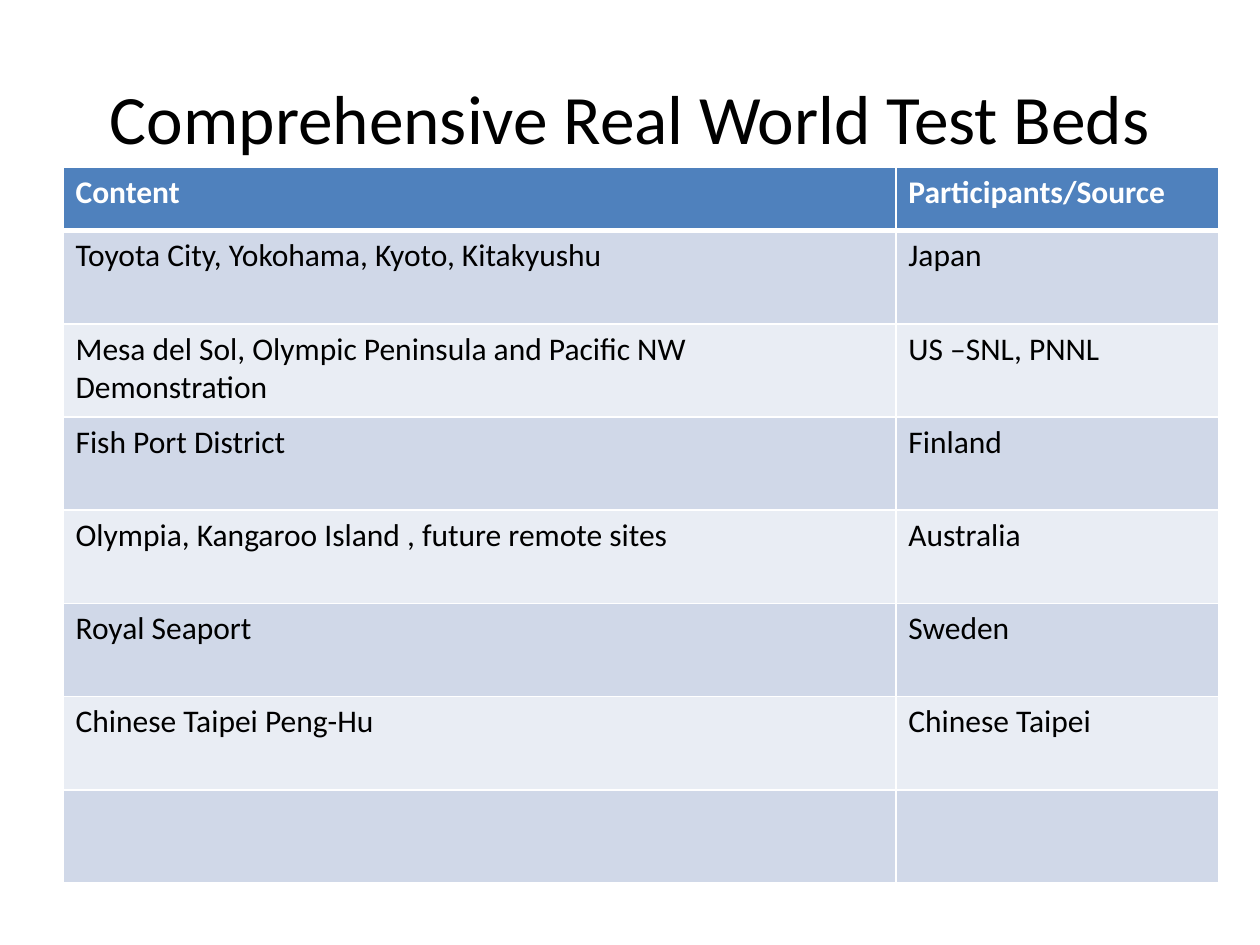
from pptx import Presentation
from pptx.dml.color import RGBColor
from pptx.enum.text import MSO_ANCHOR, PP_ALIGN
from pptx.oxml.ns import qn
from pptx.util import Inches, Pt
from lxml.etree import SubElement

FONT = "Calibri"
BLACK = RGBColor(0x00, 0x00, 0x00)
WHITE = RGBColor(0xFF, 0xFF, 0xFF)
HEADER_BLUE = RGBColor(0x4F, 0x81, 0xBD)
BANDS = (RGBColor(0xE9, 0xED, 0xF4), RGBColor(0xD0, 0xD8, 0xE8))

COL_WIDTHS = (6.61, 2.56)
HEADER_HEIGHT, ROW_HEIGHT = 0.5, 0.74
TEST_BEDS = [
    ("Content", "Participants/Source"),
    ("Toyota City, Yokohama, Kyoto, Kitakyushu", "Japan"),
    ("Mesa del Sol, Olympic Peninsula and Pacific NW Demonstration",
     "US –SNL, PNNL"),
    ("Fish Port District", "Finland"),
    ("Olympia, Kangaroo Island , future remote sites", "Australia"),
    ("Royal Seaport", "Sweden"),
    ("Chinese Taipei Peng-Hu", "Chinese Taipei"),
    ("", ""),
]


def set_font(p, size, color, bold=False):
    p.font.name = FONT
    p.font.size = Pt(size)
    p.font.bold = bold
    p.font.color.rgb = color


def add_title(s, text):
    tf = s.shapes.add_textbox(Inches(0.5), Inches(0.3),
                              Inches(9), Inches(1.25)).text_frame
    tf.word_wrap = True
    tf.vertical_anchor = MSO_ANCHOR.MIDDLE
    p = tf.paragraphs[0]
    p.text = text
    p.alignment = PP_ALIGN.CENTER
    set_font(p, 39.6, BLACK)


def set_borders(cell, **widths):
    """Draw white borders; widths are points keyed by side (L, R, T, B)."""
    tc_pr = cell._tc.get_or_add_tcPr()
    for side, width in widths.items():
        ln = SubElement(tc_pr, qn(f"a:ln{side}"), w=str(Pt(width)))
        fill = SubElement(ln, qn("a:solidFill"))
        SubElement(fill, qn("a:srgbClr"), val=str(WHITE))


def style_cell(cell, text, row):
    header = row == 0
    cell.text = text
    set_font(cell.text_frame.paragraphs[0], 18,
             WHITE if header else BLACK, bold=header)
    # Borders come before the fill in the cell properties
    set_borders(cell, L=1, R=1, T=3 if row == 1 else 1, B=3 if header else 1)
    cell.fill.solid()
    cell.fill.fore_color.rgb = HEADER_BLUE if header else BANDS[row % 2]


def add_table(s, rows):
    height = HEADER_HEIGHT + ROW_HEIGHT * (len(rows) - 1)
    table = s.shapes.add_table(len(rows), len(COL_WIDTHS),
                               Inches(0.5), Inches(1.33),
                               Inches(sum(COL_WIDTHS)), Inches(height)).table
    for column, width in zip(table.columns, COL_WIDTHS):
        column.width = Inches(width)
    for i, texts in enumerate(rows):
        table.rows[i].height = Inches(ROW_HEIGHT if i else HEADER_HEIGHT)
        for j, text in enumerate(texts):
            style_cell(table.cell(i, j), text, i)


def main():
    prs = Presentation()
    prs.slide_width, prs.slide_height = Inches(10), Inches(7.5)
    s = prs.slides.add_slide(prs.slide_layouts[6])
    add_title(s, "Comprehensive Real World Test Beds")
    add_table(s, TEST_BEDS)
    prs.save("out.pptx")


if __name__ == "__main__":
    main()
